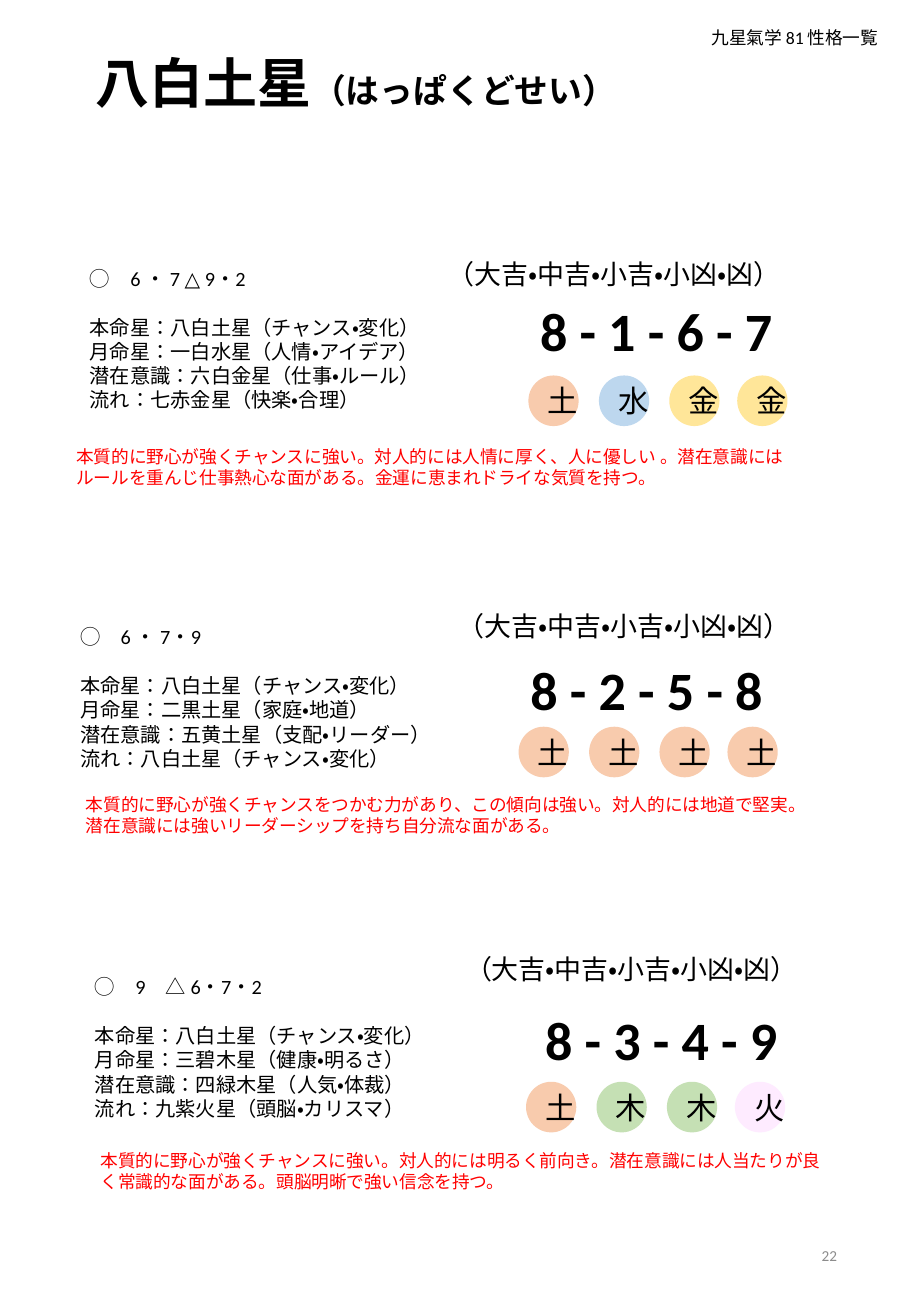
from dataclasses import dataclass

from lxml import etree
from pptx import Presentation
from pptx.dml.color import RGBColor
from pptx.enum.lang import MSO_LANGUAGE_ID
from pptx.enum.shapes import MSO_SHAPE
from pptx.enum.text import MSO_ANCHOR, MSO_AUTO_SIZE, PP_ALIGN
from pptx.oxml.ns import qn
from pptx.util import Pt

LEFT, CENTER, RIGHT = PP_ALIGN.LEFT, PP_ALIGN.CENTER, PP_ALIGN.RIGHT
TOP, MIDDLE = MSO_ANCHOR.TOP, MSO_ANCHOR.MIDDLE
NO_AUTOFIT = MSO_AUTO_SIZE.NONE
OVAL = MSO_SHAPE.OVAL
JAPANESE = MSO_LANGUAGE_ID.JAPANESE

FONT = "Calibri"
BLACK = RGBColor(0x00, 0x00, 0x00)
RED = RGBColor(0xFF, 0x00, 0x00)
GRAY = RGBColor(0x8C, 0x8C, 0x8C)
ELEMENT_COLORS = {
    "土": RGBColor(0xF8, 0xCB, 0xAD),
    "水": RGBColor(0xBD, 0xD7, 0xEE),
    "金": RGBColor(0xFF, 0xE6, 0x99),
    "木": RGBColor(0xC5, 0xE0, 0xB4),
    "火": RGBColor(0xFE, 0xEB, 0xFF),
}

COMPARISON_LAYOUT = 4
LUCK_SCALE = "（大吉・中吉・小吉・小凶・凶）"
CIRCLE_STEPS = (0, 41.8, 83.5, 123.8)
CODE_OFFSET = (267, 19)


@dataclass
class Reading:
    """One number code with its stars; each *_at is (left, top) in points."""
    stars_at: tuple
    stars_width: float
    circles_at: tuple
    luck_at: tuple
    summary_at: tuple
    compatibility: str
    stars: tuple
    code: str
    elements: str
    summary: str


READINGS = (
    Reading((46, 154), 225, (313.2, 222.5), (258.5, 149), (38.2, 260.6),
            "◯　6 ・ 7 △ 9・2",
            ("本命星：八白土星（チャンス・変化）",
             "月命星：一白水星（人情・アイデア）",
             "潜在意識：六白金星（仕事・ルール）",
             "流れ：七赤金星（快楽・合理）"),
            "8 - 1 - 6 - 7", "土水金金",
            "本質的に野心が強くチャンスに強い。対人的には人情に厚く、人に優しい 。"
            "潜在意識にはルールを重んじ仕事熱心な面がある。金運に恵まれドライな気質を持つ。"),
    Reading((40.3, 366.5), 241, (307.4, 430.6), (264.2, 357.8), (43.9, 466.6),
            "◯　6 ・ 7・9",
            ("本命星：八白土星（チャンス・変化）",
             "月命星：二黒土星（家庭・地道）",
             "潜在意識：五黄土星（支配・リーダー）",
             "流れ：八白土星（チャンス・変化）"),
            "8 - 2 - 5 - 8", "土土土土",
            "本質的に野心が強くチャンスをつかむ力があり、この傾向は強い。対人的には地道で堅実。"
            "潜在意識には強いリーダーシップを持ち自分流な面がある。"),
    Reading((49, 573.8), 224, (311.8, 641), (268.6, 560.9), (52.6, 677.5),
            "◯　9　△ 6・7・2",
            ("本命星：八白土星（チャンス・変化）",
             "月命星：三碧木星（健康・明るさ）",
             "潜在意識：四緑木星（人気・体裁）",
             "流れ：九紫火星（頭脳・カリスマ）"),
            "8 - 3 - 4 - 9", "土木木火",
            "本質的に野心が強くチャンスに強い。対人的には明るく前向き。"
            "潜在意識には人当たりが良く常識的な面がある。頭脳明晰で強い信念を持つ。"),
)


def add_run(p, text, size, color=BLACK, bold=False):
    r = p.add_run()
    r.text = text
    r.font.name = FONT
    r.font.size = Pt(size)
    r.font.bold = bold
    r.font.color.rgb = color
    r.font.language_id = JAPANESE


def place(sp, left, top, width, height):
    sp.left, sp.top, sp.width, sp.height = Pt(left), Pt(top), Pt(width), Pt(height)


def set_frame(sp, anchor=TOP):
    tf = sp.text_frame
    tf.word_wrap = True
    tf.auto_size = NO_AUTOFIT
    tf.vertical_anchor = anchor
    return tf


def add_label(s, at, size_box, text, size, color=BLACK, bold=False,
              align=LEFT, anchor=TOP):
    sp = s.shapes.add_textbox(*(Pt(v) for v in (*at, *size_box)))
    p = set_frame(sp, anchor).paragraphs[0]
    p.alignment = align
    add_run(p, text, size, color, bold)


def fill_title(sp):
    place(sp, 49.7, 26, 490, 46)
    p = set_frame(sp).paragraphs[0]
    p.alignment = LEFT
    add_run(p, "八白土星", 32, bold=True)
    add_run(p, "（はっぱくどせい）", 20, bold=True)


def fill_star_list(sp, reading):
    place(sp, *reading.stars_at, reading.stars_width, 94.3)
    tf = set_frame(sp)
    for i, line in enumerate((reading.compatibility, *reading.stars)):
        p = tf.add_paragraph() if i else tf.paragraphs[0]
        p.alignment = LEFT
        p.space_before = Pt(14.5 if i == 1 else 0)
        pPr = p._p.get_or_add_pPr()
        pPr.set("marL", "0")
        pPr.set("indent", "0")
        etree.SubElement(pPr, qn("a:buNone"))
        add_run(p, line, 12)


def add_element_circle(s, left, top, element):
    sp = s.shapes.add_shape(OVAL, Pt(left), Pt(top), Pt(29.8), Pt(30))
    sp.shadow.inherit = False
    sp.fill.solid()
    sp.fill.fore_color.rgb = ELEMENT_COLORS[element]
    sp.line.fill.background()
    p = set_frame(sp, MIDDLE).paragraphs[0]
    p.alignment = CENTER
    add_run(p, element, 18)


def add_reading(s, body, reading):
    fill_star_list(body, reading)
    code_at = [a + b for a, b in zip(reading.stars_at, CODE_OFFSET)]
    add_label(s, code_at, (181.5, 46), reading.code, 32, bold=True)
    left, top = reading.circles_at
    for step, element in zip(CIRCLE_STEPS, reading.elements):
        add_element_circle(s, left + step, top, element)
    add_label(s, reading.summary_at, (450.7, 32.4), reading.summary, 10.5, RED)
    add_label(s, reading.luck_at, (257, 26.6), LUCK_SCALE, 16)


def main():
    prs = Presentation()
    prs.slide_width, prs.slide_height = Pt(540), Pt(779.76)
    s = prs.slides.add_slide(prs.slide_layouts[COMPARISON_LAYOUT])
    title, *bodies = s.placeholders
    fill_title(title)
    add_label(s, (414.7, 12.2), (115.2, 20), "九星氣学 81 性格一覧", 10.5)
    add_label(s, (381.6, 722.9), (121.7, 41.8), "22", 9, GRAY,
              align=RIGHT, anchor=MIDDLE)
    for body, reading in zip(bodies, READINGS):
        add_reading(s, body, reading)
    for unused in bodies[len(READINGS):]:
        unused.element.getparent().remove(unused.element)
    prs.save("out.pptx")


if __name__ == "__main__":
    main()
